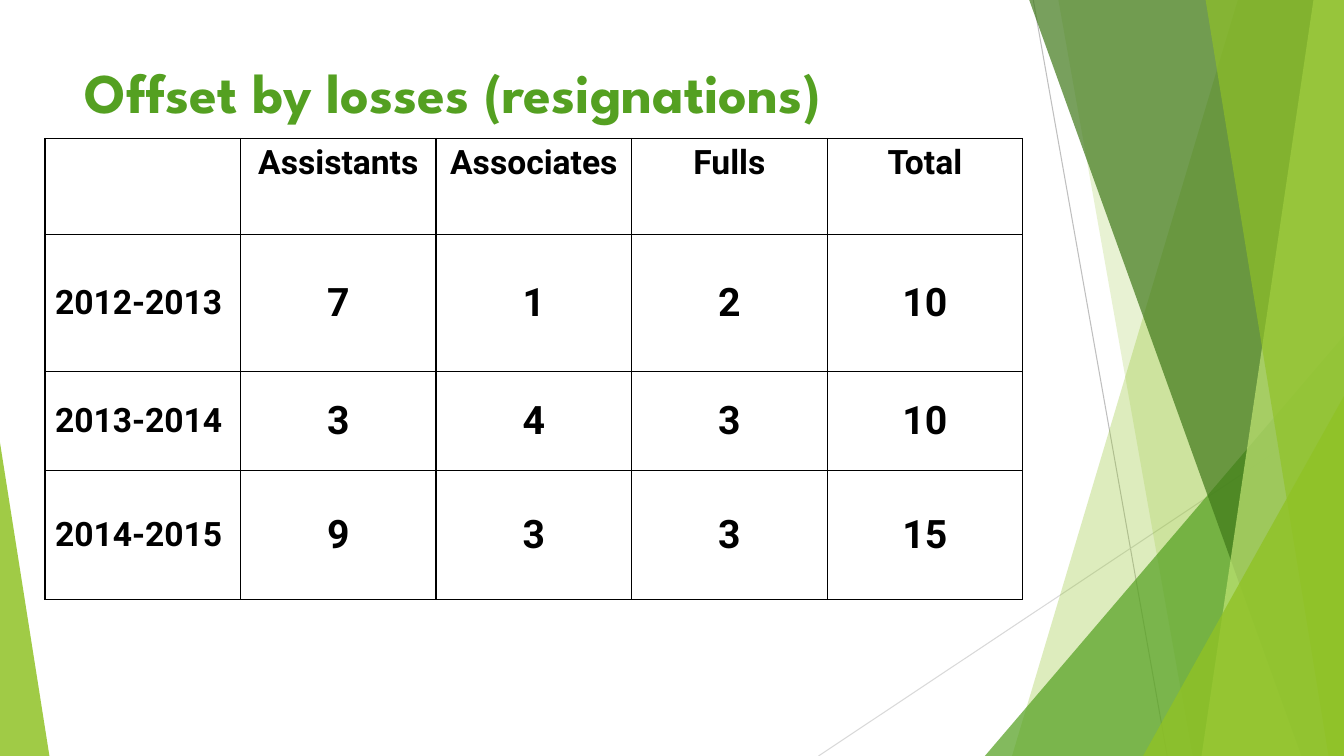
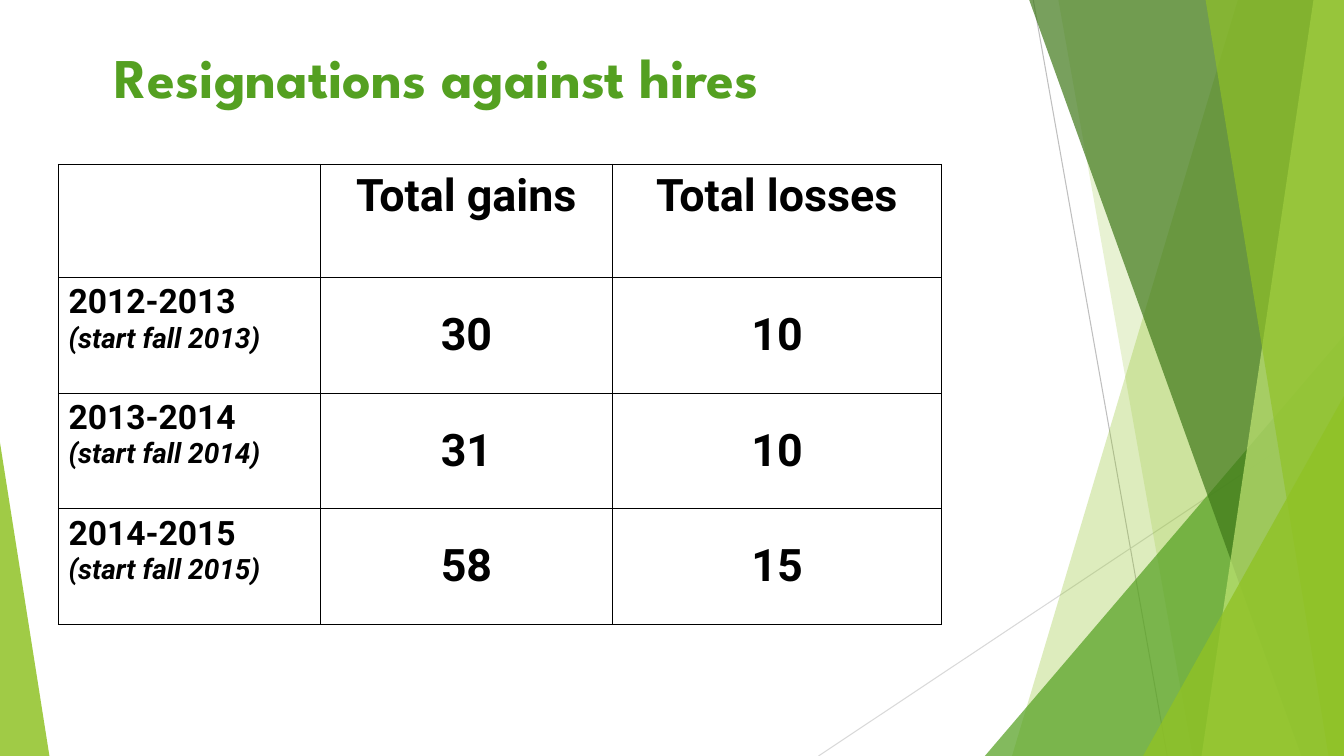
from lxml import etree
from pptx import Presentation
from pptx import util as u
from pptx.dml.color import RGBColor
from pptx.enum import shapes, text
from pptx.oxml import ns

COLORS = {
    "text": "000000", "title": "54A021", "leaf": "90C226", "grass": "54A021",
    "forest": "3F7819", "lime": "C0E474", "ray": "BFBFBF", "pale_ray": "D9D9D9",
}
TITLE_FONT, BODY_FONT = "League Spartan", "Roboto"
CENTER, LEFT = text.PP_ALIGN.CENTER, text.PP_ALIGN.LEFT
TOP, MIDDLE = text.MSO_ANCHOR.TOP, text.MSO_ANCHOR.MIDDLE
TITLE_ONLY = 5


def rgb(name):
    return RGBColor.from_string(COLORS[name])


def add_xml(parent, tag, **attributes):
    return etree.SubElement(parent, ns.qn(tag), attributes)


def write(frame, content, size, font=BODY_FONT, color="text", italic=False,
          align=LEFT, anchor=TOP):
    """Add one bold paragraph, using the first one while it is empty."""
    frame.word_wrap = True
    frame.vertical_anchor = anchor
    paragraph = frame.paragraphs[0] if not frame.text else frame.add_paragraph()
    paragraph.alignment = align
    run = paragraph.add_run()
    run.text = content
    run.font.name, run.font.size = font, u.Pt(size)
    run.font.bold, run.font.italic = True, italic
    run.font.color.rgb = rgb(color)


class Deck:
    """Slides with a shared style; every length is a percentage of the slide."""

    def __init__(self):
        self.presentation = Presentation()
        self.presentation.slide_width = u.Inches(13.33)
        self.presentation.slide_height = u.Inches(7.5)
        self.layout = self.presentation.slide_layouts[TITLE_ONLY]
        self.slide = None

    def x(self, share):
        return round(self.presentation.slide_width * share / 100)

    def y(self, share):
        return round(self.presentation.slide_height * share / 100)

    def add_slide(self, title, left, top):
        self.slide = self.presentation.slides.add_slide(self.layout)
        if len(self.presentation.slides) == 1:
            self.decorate_layout()
        shape = self.slide.shapes.title
        shape.left, shape.top = self.x(left), self.y(top)
        shape.width, shape.height = self.x(70.5), self.y(10)
        shape.text_frame.auto_size = text.MSO_AUTO_SIZE.NONE
        write(shape.text_frame, title, 40, font=TITLE_FONT, color="title")

    def decorate_layout(self):
        """Draw the rays and facets once, then hand them to the layout."""
        facets = [
            self.ray("ray", 76.88, 0, 86.85, 100),
            self.ray("pale_ray", 100, 53.73, 60.9, 100),
            self.facet("leaf", 30, 92.1, 75.3),
            self.facet("leaf", 20, 78.75, 88.73),
            self.corner("grass", 72, 73.28, 44.4, 26.72, 1),
            self.facet("forest", 70, 76.58, 96.83),
            self.facet("lime", 70, 97.73, 89.4),
            self.facet("leaf", 65, 89.7, 98.85),
            self.corner("leaf", 80, 85.05, 52.4, 14.95, 1),
            self.corner("leaf", 85, 0, 58.53, 3.68, 0),
        ]
        for number, shape in enumerate(facets, 101):
            shape.element.xpath(".//p:cNvPr")[0].set("id", str(number))
            self.layout.shapes.element.append(shape.element)

    def ray(self, color, x1, y1, x2, y2):
        line = self.slide.shapes.add_connector(
            shapes.MSO_CONNECTOR.STRAIGHT,
            self.x(x1), self.y(y1), self.x(x2), self.y(y2))
        line.line.color.rgb = rgb(color)
        line.line.width = u.Pt(0.75)
        add_xml(line.element.spPr, "a:effectLst")
        return line

    def facet(self, color, opacity, top_x, bottom_x):
        """Fill from a slanted edge to the right side of the slide."""
        builder = self.slide.shapes.build_freeform(self.x(top_x), 0)
        builder.add_line_segments([
            (self.x(100), 0), (self.x(100), self.y(100)),
            (self.x(bottom_x), self.y(100))], close=True)
        return self.tint(builder.convert_to_shape(), color, opacity)

    def corner(self, color, opacity, left, top, width, apex):
        """Stand a triangle on the bottom edge; apex 0 is left, 1 is right."""
        shape = self.slide.shapes.add_shape(
            shapes.MSO_SHAPE.ISOSCELES_TRIANGLE,
            self.x(left), self.y(top), self.x(width), self.y(100 - top))
        shape.adjustments[0] = apex
        return self.tint(shape, color, opacity)

    def tint(self, shape, color, opacity):
        shape.shadow.inherit = False
        shape.line.fill.background()
        shape.fill.solid()
        shape.fill.fore_color.rgb = rgb(color)
        add_xml(shape.element.spPr.find(".//" + ns.qn("a:srgbClr")),
                "a:alpha", val=str(opacity * 1000))
        return shape

    def table(self, left, top, widths, heights, rows, header_size, value_size,
              label_anchor):
        """Draw a grid; a label is a tuple of a year and optional notes."""
        table = self.slide.shapes.add_table(
            len(rows), len(widths), self.x(left), self.y(top),
            self.x(sum(widths)), self.y(sum(heights))).table
        table.first_row = table.horz_banding = False
        for column, width in zip(table.columns, widths):
            column.width = self.x(width)
        for row, height in zip(table.rows, heights):
            row.height = self.y(height)
        for r, values in enumerate(rows):
            for c, value in enumerate(values):
                cell = table.cell(r, c)
                self.outline(cell)
                if r == 0 and value:
                    write(cell.text_frame, value, header_size, align=CENTER)
                elif r and c == 0:
                    year, *notes = value
                    write(cell.text_frame, year, 24)
                    for note in notes:
                        write(cell.text_frame, note, 20, italic=True)
                    cell.vertical_anchor = label_anchor
                elif r:
                    write(cell.text_frame, str(value), value_size, align=CENTER)
                    cell.vertical_anchor = MIDDLE

    def outline(self, cell):
        properties = cell._tc.get_or_add_tcPr()
        for side in "LRTB":
            border = add_xml(properties, f"a:ln{side}", w=str(u.Pt(1)))
            fill = add_xml(border, "a:solidFill")
            add_xml(fill, "a:srgbClr", val=COLORS["text"])
        cell.fill.background()


def main():
    deck = Deck()

    deck.add_slide("Offset by losses (resignations)", 5.55, 6.93)
    deck.table(3.35, 18.32, [14.55] * 5, [12.7, 18.12, 13.1, 17.06], [
        ("", "Assistants", "Associates", "Fulls", "Total"),
        (("2012-2013",), 7, 1, 2, 10),
        (("2013-2014",), 3, 4, 3, 10),
        (("2014-2015",), 9, 3, 3, 15),
    ], header_size=24, value_size=28, label_anchor=MIDDLE)

    deck.add_slide("Resignations against hires", 7.8, 4.93)
    deck.table(4.35, 21.76, [19.5, 21.73, 24.48], [14.95] + [15.3] * 3, [
        ("", "Total gains", "Total losses"),
        (("2012-2013", "(start fall 2013)"), 30, 10),
        (("2013-2014", "(start fall 2014)"), 31, 10),
        (("2014-2015", "(start fall 2015)"), 58, 15),
    ], header_size=32, value_size=32, label_anchor=TOP)

    deck.presentation.save("out.pptx")


if __name__ == "__main__":
    main()
